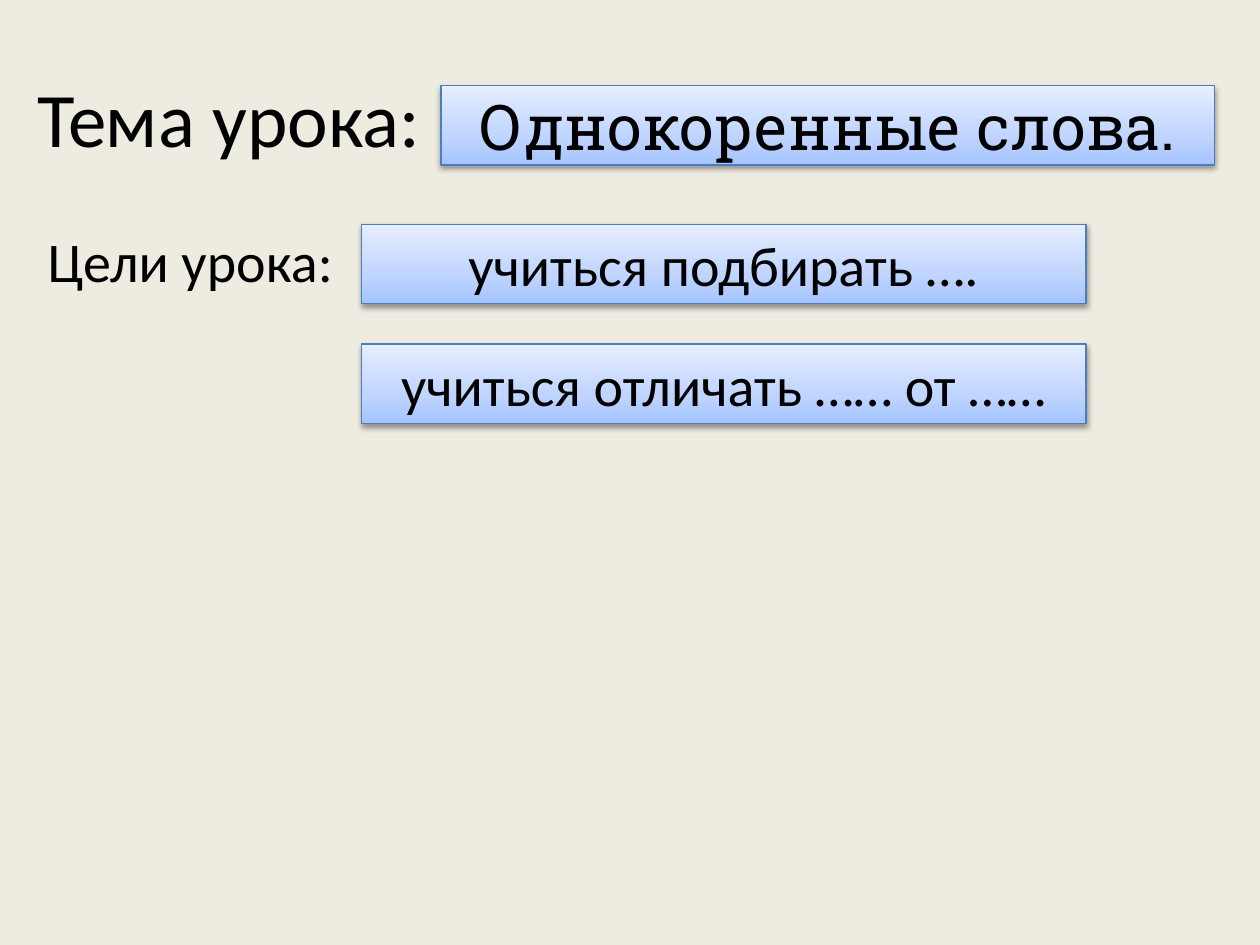
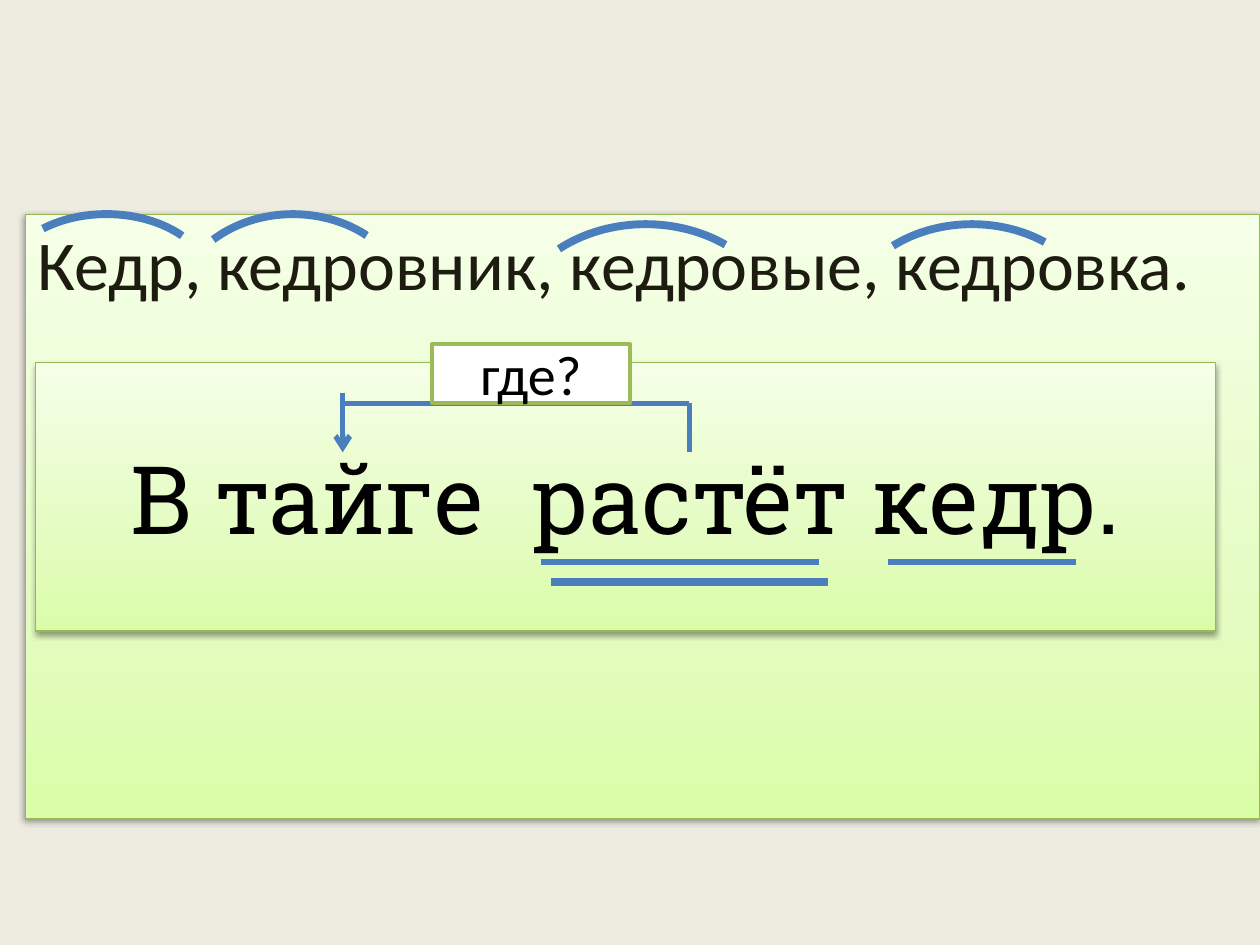
"""Builds two lesson slides about words that share a root."""
from lxml import etree
from pptx import Presentation
from pptx.dml.color import RGBColor
from pptx.enum.shapes import MSO_CONNECTOR, MSO_SHAPE
from pptx.enum.text import MSO_ANCHOR, PP_ALIGN
from pptx.oxml.ns import qn
from pptx.util import Inches, Pt

RECTANGLE, ARC = MSO_SHAPE.RECTANGLE, MSO_SHAPE.ARC
STRAIGHT = MSO_CONNECTOR.STRAIGHT
LEFT, CENTER = PP_ALIGN.LEFT, PP_ALIGN.CENTER
TOP, MIDDLE = MSO_ANCHOR.TOP, MSO_ANCHOR.MIDDLE

PAPER = RGBColor(0xEE, 0xEC, 0xE1)
BLACK = RGBColor(0x00, 0x00, 0x00)
WHITE = RGBColor(0xFF, 0xFF, 0xFF)
DARK_OLIVE = RGBColor(0x1E, 0x1C, 0x11)
BLUE = RGBColor(0x4B, 0x7E, 0xBC)
GREEN = RGBColor(0x98, 0xB9, 0x55)
LEAF = RGBColor(0x9B, 0xBB, 0x59)
BLUE_GLOW = (RGBColor(0xA4, 0xC4, 0xFF), RGBColor(0xBF, 0xD4, 0xFF), RGBColor(0xE6, 0xEE, 0xFF))
GREEN_GLOW = (RGBColor(0xDA, 0xFD, 0xA7), RGBColor(0xE4, 0xFC, 0xC2), RGBColor(0xF5, 0xFF, 0xE7))
GLOW_STOPS = (0, 35000, 100000)
SANS, SLAB = "Calibri", "Roboto Slab"

deck = Presentation()
deck.slide_width, deck.slide_height = Inches(10), Inches(7.5)
CELL = deck.slide_width // 100
deck.slide_master.background.fill.solid()
deck.slide_master.background.fill.fore_color.rgb = PAPER
blank = deck.slide_layouts[6]


def grid(*cells):
    """Turns grid cells, 100 across and 75 down, into lengths."""
    return [round(cell * CELL) for cell in cells]


def add_text(slide, text, area, size=32, font=SANS, color=BLACK, align=CENTER,
             anchor=MIDDLE, before=0, surface=(), edge=None, edge_width=0.75):
    """Adds text, on a rectangle when a surface of one or three colours is given."""
    if surface:
        holder = slide.shapes.add_shape(RECTANGLE, *grid(*area))
        holder.shadow.inherit = False
        holder.line.color.rgb = edge
        holder.line.width = Pt(edge_width)
    else:
        holder = slide.shapes.add_textbox(*grid(*area))
    if len(surface) == 1:
        holder.fill.solid()
        holder.fill.fore_color.rgb = surface[0]
    elif surface:
        holder.fill.gradient()
        holder.fill.gradient_angle = 90
        properties = holder._element.spPr
        stops = properties.find(".//" + qn("a:gsLst"))
        stops.clear()
        for position, tint in zip(GLOW_STOPS, surface):
            stop = etree.SubElement(stops, qn("a:gs"), pos=str(position))
            etree.SubElement(stop, qn("a:srgbClr"), val=str(tint))
        shadow = etree.SubElement(properties.find(qn("a:effectLst")), qn("a:outerShdw"),
                                  blurRad="40000", dist="20000", dir="5400000", rotWithShape="0")
        shade = etree.SubElement(shadow, qn("a:srgbClr"), val=str(BLACK))
        etree.SubElement(shade, qn("a:alpha"), val="38000")
    frame = holder.text_frame
    frame.word_wrap = True
    frame.vertical_anchor = anchor
    paragraph = frame.paragraphs[0]
    paragraph.alignment = align
    paragraph.space_before = Pt(before)
    run = paragraph.add_run()
    run.text = text
    run.font.size, run.font.name, run.font.color.rgb = Pt(size), font, color


goals = deck.slides.add_slide(blank)
add_text(goals, "Тема урока:", (2, 3, 93, 12.5), size=44, align=LEFT)
add_text(goals, "Цели урока:", (2.8, 17.5, 92.2, 49.5), align=LEFT, anchor=TOP, before=6.4)
add_text(goals, "Однокоренные слова.", (35, 6.8, 61.4, 6.3), size=36, font=SLAB,
         surface=BLUE_GLOW, edge=BLUE)
for row, goal in enumerate(("учиться подбирать ….", "учиться отличать …… от ……")):
    add_text(goals, goal, (28.7, 17.8 + 9.5 * row, 57.5, 6.3), surface=BLUE_GLOW, edge=BLUE)

analysis = deck.slides.add_slide(blank)
add_text(analysis, "Кедр, кедровник, кедровые, кедровка.", (2, 17, 98, 48), size=40,
         color=DARK_OLIVE, align=LEFT, anchor=TOP, before=8, surface=GREEN_GLOW, edge=GREEN)

root_marks = (
    ((0, 17, 16.9, 11.6), 195.49),
    ((13.8, 17, 18.9, 15.7), 188.12),
    ((40.6, 17.8, 21.3, 16.6), 188.12),
    ((67.3, 17.8, 19.7, 15), 188.12),
)
for area, arc_end in root_marks:
    root_mark = analysis.shapes.add_shape(ARC, *grid(*area))
    root_mark.adjustments[0], root_mark.adjustments[1] = 133.59, arc_end
    root_mark.shadow.inherit = False
    root_mark.fill.background()
    root_mark.line.color.rgb = BLUE
    root_mark.line.width = Pt(4.5)

add_text(analysis, "В тайге  растёт кедр.", (2.8, 28.8, 93.7, 21.3), size=54, font=SLAB,
         surface=GREEN_GLOW, edge=GREEN)

sentence_marks = (
    ((70.5, 44.6, 85.4, 44.6), 3, False),
    ((42.9, 44.6, 65, 44.6), 3, False),
    ((43.7, 46.2, 65.7, 46.2), 4.5, False),
    ((27.2, 31.2, 27.2, 35.9), 3, True),
    ((27.2, 32, 54.7, 32), 3, False),
    ((54.7, 32, 54.7, 35.9), 3, False),
)
for ends, width, has_arrow in sentence_marks:
    mark = analysis.shapes.add_connector(STRAIGHT, *grid(*ends))
    mark.line.color.rgb = BLUE
    mark.line.width = Pt(width)
    if has_arrow:
        etree.SubElement(mark.line._get_or_add_ln(), qn("a:tailEnd"), type="arrow")
    etree.SubElement(mark._element.spPr, qn("a:effectLst"))

add_text(analysis, "где?", (34.3, 27.3, 15.7, 4.7), surface=(WHITE,), edge=LEAF, edge_width=2)

deck.save("out.pptx")
